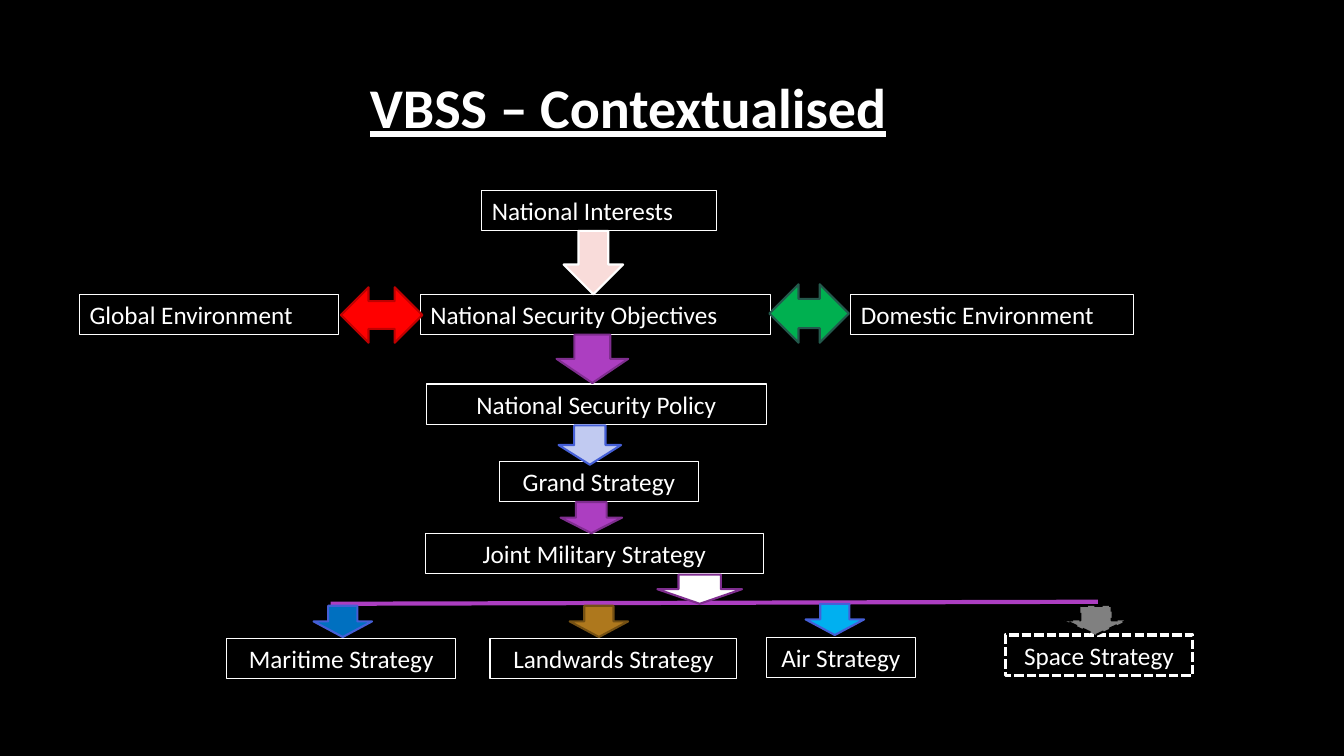
"""Build the VBSS strategy hierarchy slide."""
import pptx
import pptx.util
import pptx.dml.color
import pptx.enum.dml
import pptx.enum.shapes
import pptx.enum.text
import pptx.oxml
import pptx.oxml.ns

Inches = pptx.util.Inches
Pt = pptx.util.Pt
RGBColor = pptx.dml.color.RGBColor
DASH = pptx.enum.dml.MSO_LINE
SHAPE = pptx.enum.shapes.MSO_SHAPE
ALIGN = pptx.enum.text.PP_ALIGN
ANCHOR = pptx.enum.text.MSO_ANCHOR

BLACK = RGBColor(0x00, 0x00, 0x00)
WHITE = RGBColor(0xFF, 0xFF, 0xFF)
PINK = RGBColor(0xF9, 0xDC, 0xDA)
PURPLE = RGBColor(0xAC, 0x3E, 0xC1)
DARK_PURPLE = RGBColor(0x7F, 0x2E, 0x8F)
PALE_BLUE = RGBColor(0xC1, 0xCA, 0xF1)
BLUE = RGBColor(0x45, 0x5F, 0xD6)
RED = RGBColor(0xFF, 0x00, 0x00)
DARK_RED = RGBColor(0xC0, 0x00, 0x00)
GREEN = RGBColor(0x00, 0xB0, 0x50)
DARK_GREEN = RGBColor(0x23, 0x59, 0x4C)
SEA_BLUE = RGBColor(0x00, 0x70, 0xC0)
EARTH = RGBColor(0xAE, 0x78, 0x1D)
DARK_EARTH = RGBColor(0x74, 0x50, 0x13)
SKY_BLUE = RGBColor(0x00, 0xB0, 0xF0)
GREY = RGBColor(0x80, 0x80, 0x80)

BOX_HEIGHT = 0.4

deck = pptx.Presentation()
deck.slide_width = Inches(13.33)
deck.slide_height = Inches(7.5)
slide = deck.slides.add_slide(deck.slide_layouts[6])
slide.background.fill.solid()
slide.background.fill.fore_color.rgb = BLACK


def write(frame, text, size, align):
    frame.word_wrap = True
    paragraph = frame.paragraphs[0]
    paragraph.text = text
    paragraph.alignment = align
    paragraph.font.name = "Calibri"
    paragraph.font.size = Pt(size)
    paragraph.font.color.rgb = WHITE
    return paragraph


def add_outlined(kind, left, top, width, height, color, weight, dash=None):
    shape = slide.shapes.add_shape(
        kind, Inches(left), Inches(top), Inches(width), Inches(height))
    shape.shadow.inherit = False
    shape.line.color.rgb = color
    shape.line.width = Pt(weight)
    if dash:
        shape.line.dash_style = dash
    return shape


title = slide.shapes.add_textbox(
    Inches(0.75), Inches(0.67), Inches(10.96), Inches(1.59))
heading = write(title.text_frame, "VBSS – Contextualised", 40, ALIGN.CENTER)
heading.font.bold = True
heading.font.underline = True

levels = [
    ("National Interests", 4.78, 1.89, 2.33, ALIGN.LEFT, 0.75, None),
    ("National Security Objectives", 4.17, 2.92, 3.47, ALIGN.LEFT, 0.75, None),
    ("National Security Policy", 4.23, 3.81, 3.37, ALIGN.CENTER, 0.75, None),
    ("Grand Strategy", 4.95, 4.58, 1.98, ALIGN.CENTER, 0.75, None),
    ("Joint Military Strategy", 4.22, 5.29, 3.35, ALIGN.CENTER, 0.75, None),
    ("Global Environment", 0.79, 2.92, 2.57, ALIGN.LEFT, 0.75, None),
    ("Domestic Environment", 8.44, 2.92, 2.8, ALIGN.LEFT, 0.75, None),
    ("Maritime Strategy", 2.25, 6.33, 2.27, ALIGN.CENTER, 0.75, None),
    ("Landwards Strategy", 4.86, 6.33, 2.45, ALIGN.CENTER, 0.75, None),
    ("Air Strategy", 7.6, 6.32, 1.48, ALIGN.CENTER, 0.75, None),
    ("Space Strategy", 9.97, 6.3, 1.86, ALIGN.CENTER, 2.25, DASH.SQUARE_DOT),
]
for label, left, top, width, align, weight, dash in levels:
    level = add_outlined(
        SHAPE.RECTANGLE, left, top, width, BOX_HEIGHT, WHITE, weight, dash)
    level.fill.background()
    level.text_frame.vertical_anchor = ANCHOR.TOP
    write(level.text_frame, label, 18, align)

branch_line = slide.shapes.add_connector(
    pptx.enum.shapes.MSO_CONNECTOR.STRAIGHT,
    Inches(3.28), Inches(5.99), Inches(10.89), Inches(5.97))
branch_line.line.color.rgb = PURPLE
branch_line.line.width = Pt(3)
branch_line._element.spPr.append(pptx.oxml.parse_xml(
    "<a:effectLst %s/>" % pptx.oxml.ns.nsdecls("a")))

arrows = [
    (SHAPE.DOWN_ARROW, 5.59, 2.29, 0.59, 0.63, PINK, WHITE, None),
    (SHAPE.DOWN_ARROW, 5.52, 3.32, 0.71, 0.48, PURPLE, DARK_PURPLE, None),
    (SHAPE.DOWN_ARROW, 5.54, 4.22, 0.62, 0.39, PALE_BLUE, BLUE, None),
    (SHAPE.DOWN_ARROW, 5.56, 4.98, 0.61, 0.31, PURPLE, DARK_PURPLE, None),
    (SHAPE.LEFT_RIGHT_ARROW, 3.38, 2.85, 0.81, 0.55, RED, DARK_RED, None),
    (SHAPE.LEFT_RIGHT_ARROW, 7.63, 2.82, 0.79, 0.58, GREEN, DARK_GREEN, None),
    (SHAPE.DOWN_ARROW, 6.52, 5.7, 0.84, 0.29, WHITE, DARK_PURPLE, None),
    (SHAPE.DOWN_ARROW, 3.11, 6.01, 0.58, 0.31, SEA_BLUE, BLUE, None),
    (SHAPE.DOWN_ARROW, 5.65, 6.01, 0.58, 0.31, EARTH, DARK_EARTH, None),
    (SHAPE.DOWN_ARROW, 7.99, 5.99, 0.58, 0.31, SKY_BLUE, BLUE, None),
    (SHAPE.DOWN_ARROW, 10.56, 6.01, 0.62, 0.29, GREY, BLACK, DASH.DASH),
]
for kind, left, top, width, height, fill, outline, dash in arrows:
    arrow = add_outlined(kind, left, top, width, height, outline, 1.5, dash)
    arrow.fill.solid()
    arrow.fill.fore_color.rgb = fill

deck.save("out.pptx")
